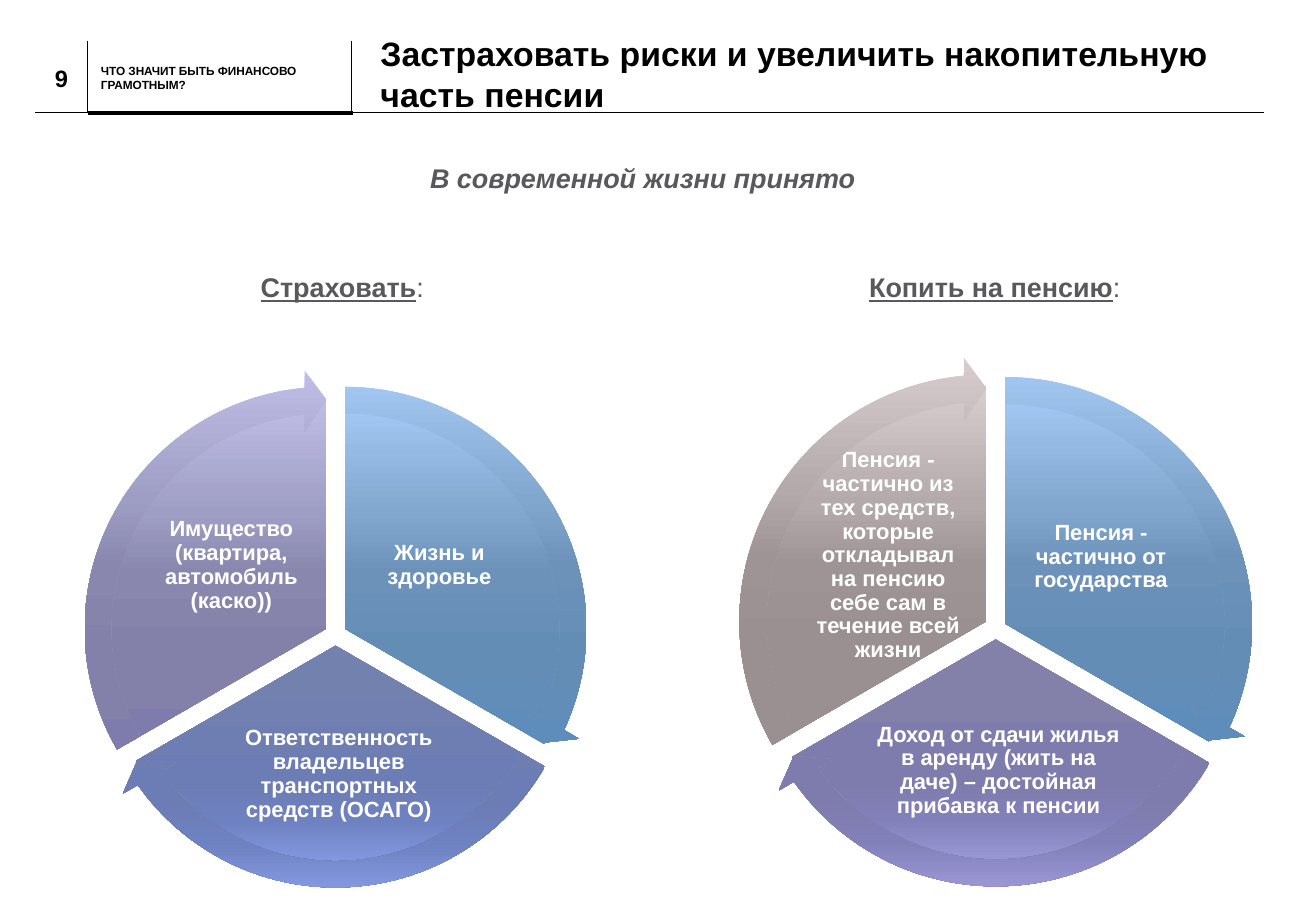
from copy import deepcopy

from lxml import etree
from pptx import Presentation
from pptx.dml.color import RGBColor
from pptx.enum.shapes import MSO_CONNECTOR, MSO_SHAPE
from pptx.enum.text import MSO_ANCHOR, MSO_AUTO_SIZE, PP_ALIGN
from pptx.oxml.ns import qn
from pptx.util import Cm, Pt

STRAIGHT = MSO_CONNECTOR.STRAIGHT
PIE, CIRCULAR_ARROW = MSO_SHAPE.PIE, MSO_SHAPE.CIRCULAR_ARROW
TOP, MIDDLE = MSO_ANCHOR.TOP, MSO_ANCHOR.MIDDLE
LEFT, CENTER = PP_ALIGN.LEFT, PP_ALIGN.CENTER
FIXED, GROW = MSO_AUTO_SIZE.NONE, MSO_AUTO_SIZE.SHAPE_TO_FIT_TEXT

BLACK, GRAY, WHITE = "000000", "59595B", "FFFFFF"
STOPS = [0, 0.25, 0.38, 0.55, 0.8, 0.88, 1]
SKY = ["A6CBF6", "81A7CE", "6C92BA", "648DB6", "5B8CBD", "5B93CD", "73B5F8"]
VIOLET = ["C0BEE8", "9E9DC3", "8987AD", "8381A9", "7E7CAC", "8280B8", "A29FE0"]
BLUE = ["B2BFEE", "8F9CC8", "7A87B3", "7381AF", "6C7CB4", "6E81C1", "8AA0EB"]
TAUPE = ["D7CDCE", "B4AAAC", "9E9496", "9A8F91", "998D8F", "A29496", "C7B6B9"]


def paint(color, hex_value):
    color.rgb = RGBColor.from_string(hex_value)


def write(box, text, size, hex_value, align=LEFT, anchor=TOP, inset=None, fit=FIXED):
    frame = box.text_frame
    frame.word_wrap = True
    frame.auto_size = fit
    frame.vertical_anchor = anchor
    if inset is not None:
        frame.margin_left = frame.margin_right = Cm(inset)
        frame.margin_top = frame.margin_bottom = Cm(inset)
    paragraph = frame.paragraphs[0]
    paragraph.alignment = align
    run = paragraph.add_run()
    run.text = text
    run.font.name = "Arial"
    run.font.size = Pt(size)
    run.font.bold = True
    paint(run.font.color, hex_value)
    return paragraph


prs = Presentation()
prs.slide_width, prs.slide_height = Cm(27.51), Cm(19.05)
slide = prs.slides.add_slide(prs.slide_layouts[5])
shapes = slide.shapes

header_rules = [
    (1.83, 2.34, 0.74, 2.34, 0.25),
    (7.37, 2.36, 1.83, 2.36, 2.25),
    (26.42, 2.34, 7.32, 2.34, 0.25),
    (1.83, 2.36, 1.83, 0.86, 0.25),
    (7.34, 2.36, 7.34, 0.86, 0.25),
]
for *ends, weight in header_rules:
    rule = shapes.add_connector(STRAIGHT, *map(Cm, ends))
    rule.line.width = Pt(weight)
    paint(rule.line.color, BLACK)
    etree.SubElement(rule._element.spPr, qn("a:effectLst"))

section = shapes.add_textbox(Cm(2.11), Cm(1.32), Cm(5.16), Cm(0.61))
write(section, "ЧТО ЗНАЧИТ БЫТЬ ФИНАНСОВО ГРАМОТНЫМ?", 7, BLACK, LEFT, MIDDLE, 0, GROW)

page_number = shapes.add_textbox(Cm(0.74), Cm(1.12), Cm(1.09), Cm(1.02))
write(page_number, "9", 14, BLACK, CENTER, MIDDLE, 0)

title = shapes.title
title.left, title.top, title.width, title.height = Cm(7.7), Cm(0.56), Cm(19.38), Cm(1.96)
write(title, "Застраховать риски и увеличить накопительную часть пенсии", 20, BLACK, fit=GROW)

subtitle = shapes.add_textbox(Cm(8.74), Cm(3.25), Cm(9.68), Cm(0.94))
statement = write(subtitle, "В современной жизни принято", 16, GRAY, fit=GROW)
statement.runs[0].font.italic = True
subtitle.text_frame.word_wrap = False

sector_angles = [(162, 18), (18, 90), (90, 162)]
arrow_angles = [(14.725, 161.994), (86.72, 18.005), (158.73, 90)]

wheels = [
    ("Копить на пенсию", 15.27, 9.83, [
        ("Пенсия - частично от государства", SKY, 16.1, 8.13, (21.26, 10.19, 3.51, 2.92)),
        ("Доход от сдачи жилья в аренду (жить на даче) – достойная прибавка к пенсии",
         VIOLET, 15.9, 8.46, (18.24, 14.83, 5.26, 2.57)),
        ("Пенсия - частично из тех средств, которые откладывал на пенсию себе сам "
         "в течение всей жизни", TAUPE, 15.7, 8.08, (16.81, 10.16, 3.51, 2.92)),
    ]),
    ("Страховать", 1.63, 9.63, [
        ("Жизнь и здоровье", SKY, 2.39, 8.33, (7.47, 10.39, 3.43, 2.87)),
        ("Ответственность владельцев транспортных средств (ОСАГО)",
         BLUE, 2.2, 8.69, (4.5, 14.94, 5.16, 2.51)),
        ("Имущество (квартира, автомобиль (каско))",
         VIOLET, 2.01, 8.33, (3.12, 10.39, 3.43, 2.87)),
    ]),
]

for heading, heading_left, diameter, sectors in wheels:
    heading_box = shapes.add_textbox(Cm(heading_left), Cm(5.54), Cm(11.05), Cm(0.94))
    heading_line = write(heading_box, heading, 16, GRAY, CENTER, fit=GROW)
    heading_line.runs[0].font.underline = True
    colon = heading_line.add_run()
    colon.text = ":"
    colon.font.name = "Arial"
    colon.font.size = Pt(16)
    paint(colon.font.color, GRAY)

    wheel = shapes.add_group_shape().shapes
    margin = diameter / 16
    pieces = []
    for (label, gradient, left, top, label_box), angles in zip(sectors, sector_angles):
        sector = wheel.add_shape(PIE, Cm(left), Cm(top), Cm(diameter), Cm(diameter))
        pieces.append((sector, angles, gradient))
        label_text = wheel.add_textbox(*map(Cm, label_box))
        line = write(label_text, label, 13, WHITE, CENTER, MIDDLE, 0.05)
        line.line_spacing = 0.9
    for (label, gradient, left, top, label_box), angles in zip(sectors, arrow_angles):
        span = Cm(diameter + 2 * margin)
        arrow = wheel.add_shape(CIRCULAR_ARROW, Cm(left - margin), Cm(top - margin), span, span)
        pieces.append((arrow, (0.051, 3.275, *angles, 0.059), gradient))

    for piece, adjustments, gradient in pieces:
        for index, value in enumerate(adjustments):
            piece.adjustments[index] = value
        piece.shadow.inherit = False
        piece.line.fill.background()
        piece.fill.gradient()
        piece.fill.gradient_angle = 270
        stop_list = piece._element.spPr.find(qn("a:gradFill")).find(qn("a:gsLst"))
        for extra in range(len(STOPS) - len(stop_list)):
            stop_list.append(deepcopy(stop_list[0]))
        for stop, position, hex_value in zip(piece.fill.gradient_stops, STOPS, gradient):
            stop.position = position
            paint(stop.color, hex_value)

prs.save("out.pptx")
